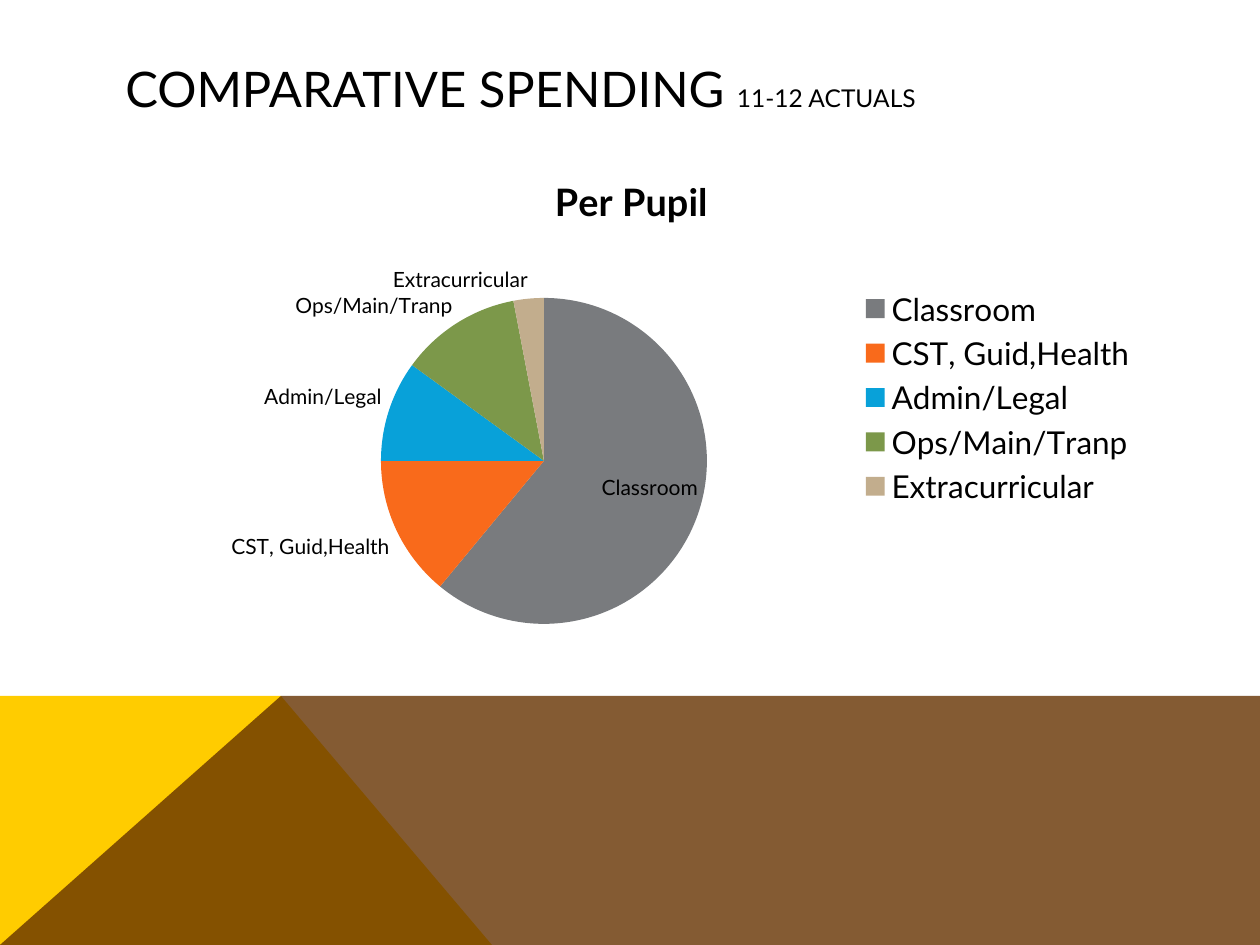
from lxml import etree
from pptx import Presentation
from pptx.chart.data import CategoryChartData
from pptx.dml.color import RGBColor
from pptx.enum.chart import XL_CHART_TYPE, XL_LABEL_POSITION, XL_LEGEND_POSITION
from pptx.enum.text import MSO_ANCHOR
from pptx.oxml.ns import qn
from pptx.util import Pt

PIE = XL_CHART_TYPE.PIE
BEST_FIT = XL_LABEL_POSITION.BEST_FIT
RIGHT = XL_LEGEND_POSITION.RIGHT
MIDDLE = MSO_ANCHOR.MIDDLE

PX = 914400 / 126
WIDTH, HEIGHT = 1260, 945
FONT = "Lato"
COLORS = {
    "text": "000000",
    "yellow": "FFCC00",
    "brown": "663300",
    "Classroom": "797B7E",
    "CST, Guid,Health": "F96A1B",
    "Admin/Legal": "08A1D9",
    "Ops/Main/Tranp": "7C984A",
    "Extracurricular": "C2AD8D",
}
SPENDING = {
    "Classroom": 61,
    "CST, Guid,Health": 14,
    "Admin/Legal": 10,
    "Ops/Main/Tranp": 12,
    "Extracurricular": 3,
}


def emu(*lengths):
    return [round(n * PX) for n in lengths]


class SlideBuilder:
    def __init__(self, slide):
        self.slide = slide

    def color(self, name):
        return RGBColor.from_string(COLORS[name])

    def style_font(self, font, size, bold=False):
        font.name = FONT
        font.size = Pt(size)
        font.bold = bold
        font.color.rgb = self.color("text")

    def polygon(self, points, fill, opacity=100):
        builder = self.slide.shapes.build_freeform(*points[0], scale=PX)
        builder.add_line_segments(points[1:], close=True)
        sp = builder.convert_to_shape()
        sp.shadow.inherit = False
        sp.fill.solid()
        sp.fill.fore_color.rgb = self.color(fill)
        sp.line.fill.background()
        if opacity < 100:
            clr = sp.fill._xPr.find(".//" + qn("a:srgbClr"))
            etree.SubElement(clr, qn("a:alpha"), val=str(opacity * 1000))

    def text(self, box, runs):
        tf = self.slide.shapes.add_textbox(*emu(*box)).text_frame
        tf.word_wrap = True
        tf.vertical_anchor = MIDDLE
        p = tf.paragraphs[0]
        for text, size in runs:
            r = p.add_run()
            r.text = text
            self.style_font(r.font, size)

    def pie(self, box, title, values, plot):
        data = CategoryChartData()
        data.categories = list(values)
        data.add_series(title, list(values.values()))
        chart = self.slide.shapes.add_chart(PIE, *emu(*box), data).chart
        self.style_font(chart.font, 18)

        chart.has_title = True
        r = chart.chart_title.text_frame.paragraphs[0].add_run()
        r.text = title
        self.style_font(r.font, 21.6, bold=True)
        chart.chart_title.include_in_layout = False

        chart.has_legend = True
        chart.legend.position = RIGHT
        chart.legend.include_in_layout = False
        self.style_font(chart.legend.font, 18)

        pie = chart.plots[0]
        pie.vary_by_categories = True
        for i, name in enumerate(values):
            fill = pie.series[0].points[i].format.fill
            fill.solid()
            fill.fore_color.rgb = self.color(name)
        labels = pie.series[0].data_labels
        labels.show_category_name = True
        labels.show_value = False
        labels.show_percentage = False
        labels.position = BEST_FIT
        self.style_font(labels.font, 12)
        self.place_plot(chart, box, plot)

    def place_plot(self, chart, box, plot):
        """Fix the inner plot area, given in slide px, inside the chart box."""
        left, top, width, height = box
        x, y, w, h = plot
        area = chart.plots[0]._element.getparent()
        layout = area.find(qn("c:layout"))
        if layout is None:
            layout = etree.Element(qn("c:layout"))
            area.insert(0, layout)
        manual = etree.SubElement(layout, qn("c:manualLayout"))
        settings = {
            "layoutTarget": "inner", "xMode": "edge", "yMode": "edge",
            "x": (x - left) / width, "y": (y - top) / height,
            "w": w / width, "h": h / height,
        }
        for tag, value in settings.items():
            etree.SubElement(manual, qn(f"c:{tag}"), val=str(value))


def main():
    prs = Presentation()
    prs.slide_width, prs.slide_height = emu(WIDTH, HEIGHT)
    s = SlideBuilder(prs.slides.add_slide(prs.slide_layouts[6]))

    peak = (281, 696)
    corner = (0, HEIGHT)
    s.polygon([corner, (0, 696), peak, (492, HEIGHT)], "yellow")
    s.polygon([corner, peak, (WIDTH, 696), (WIDTH, HEIGHT)], "brown", opacity=80)

    s.text((113, 50, 1036, 76),
           [("COMPARATIVE SPENDING ", 28), ("11-12 ACTUALS", 14)])
    s.pie((113, 151, 1037, 493), "Per Pupil", SPENDING, plot=(381, 298, 326, 326))
    prs.save("out.pptx")


if __name__ == "__main__":
    main()
